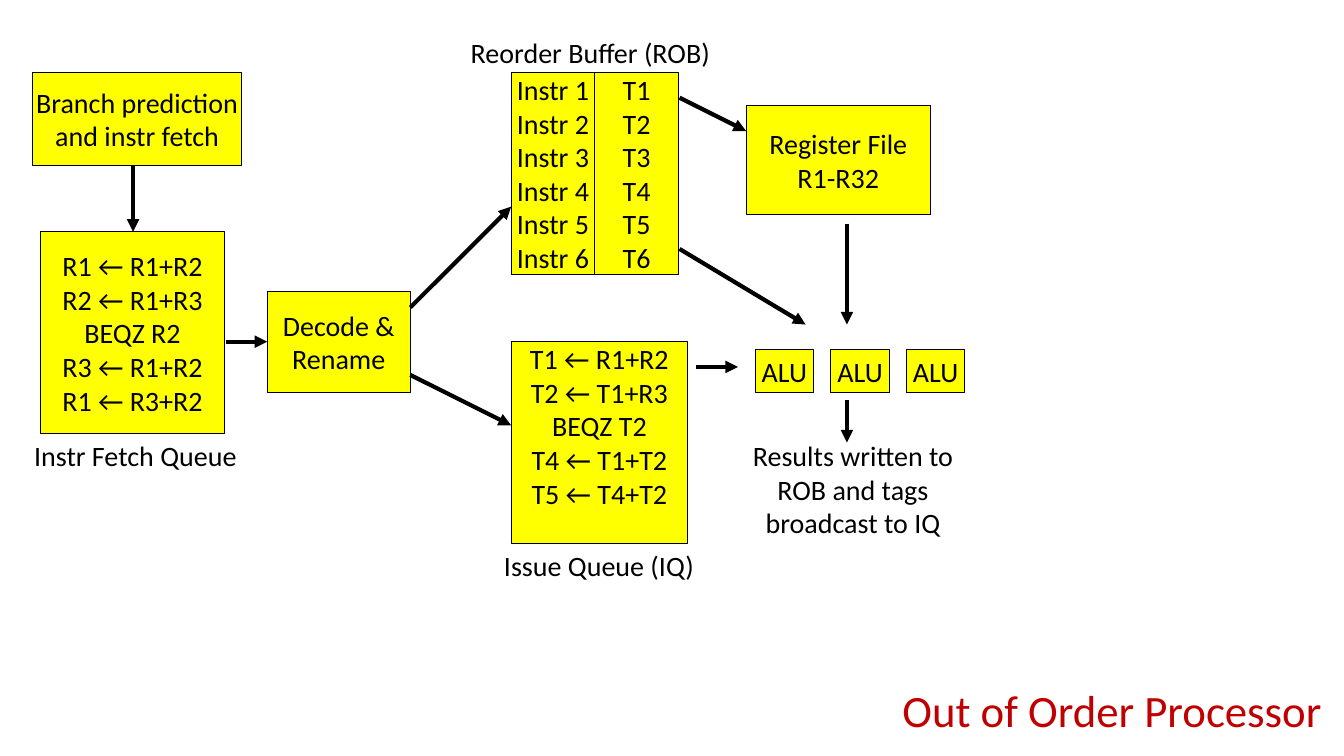
from lxml import etree
from pptx import Presentation
from pptx.dml.color import RGBColor
from pptx.enum.shapes import MSO_CONNECTOR, MSO_SHAPE
from pptx.enum.text import MSO_ANCHOR, MSO_AUTO_SIZE, PP_ALIGN
from pptx.oxml.ns import qn
from pptx.util import Pt

PX = 9144  # 100 px to the inch
BLACK, YELLOW, RED = "000000", "FFFF00", "C00000"

prs = Presentation()
prs.slide_width, prs.slide_height = 1333 * PX, 750 * PX
s = prs.slides.add_slide(prs.slide_layouts[5])


def write(sp, text, size=20, color=BLACK, align=PP_ALIGN.CENTER,
          anchor=MSO_ANCHOR.MIDDLE):
    """Fill a shape with unwrapped text, one paragraph per line."""
    tf = sp.text_frame
    tf.text = text
    tf.word_wrap = False
    tf.vertical_anchor = anchor
    for p in tf.paragraphs:
        p.alignment = align
        for r in p.runs:
            r.font.name = "Calibri"
            r.font.size = Pt(size)
            r.font.color.rgb = RGBColor.from_string(color)


title = s.shapes.title
title.left, title.top, title.width, title.height = (
    v * PX for v in (885, 672, 440, 64))
write(title, "Out of Order Processor", 32, RED, PP_ALIGN.LEFT, MSO_ANCHOR.TOP)
title.text_frame.auto_size = MSO_AUTO_SIZE.SHAPE_TO_FIT_TEXT

rob_instrs = "\n".join(f"Instr {i}" for i in range(1, 7))
rob_tags = "\n".join(f"T{i}" for i in range(1, 7))
fetch_queue = "R1 ← R1+R2\nR2 ← R1+R3\nBEQZ R2\nR3 ← R1+R2\nR1 ← R3+R2"
issue_queue = "T1 ← R1+R2\nT2 ← T1+R3\nBEQZ T2\nT4 ← T1+T2\nT5 ← T4+T2"

boxes = [
    (32, 72, 208, 92, "Branch prediction\nand instr fetch"),
    (40, 230, 183, 200, fetch_queue),
    (265, 289, 142, 100, "Decode &\nRename"),
    (507, 72, 83, 200, rob_instrs),
    (590, 72, 83, 200, rob_tags),
    (507, 339, 175, 200, issue_queue),
    (740, 105, 183, 108, "Register File\nR1-R32"),
]
boxes += [(749 + 75 * i, 347, 58, 42, "ALU") for i in range(3)]
for x, y, w, h, text in boxes:
    sp = s.shapes.add_shape(MSO_SHAPE.RECTANGLE, x * PX, y * PX, w * PX, h * PX)
    sp.shadow.inherit = False
    sp.fill.solid()
    sp.fill.fore_color.rgb = RGBColor.from_string(YELLOW)
    sp.line.color.rgb = RGBColor.from_string(BLACK)
    sp.line.width = Pt(0.75)
    write(sp, text)
    if text == issue_queue:  # entries fill the queue from the top
        sp.text_frame.vertical_anchor = MSO_ANCHOR.TOP
        sp.text_frame.margin_top = 0

labels = [
    (24, 430, 223, 44, "Instr Fetch Queue", PP_ALIGN.LEFT),
    (457, 30, 260, 44, "Reorder Buffer (ROB)", PP_ALIGN.LEFT),
    (490, 539, 211, 44, "Issue Queue (IQ)", PP_ALIGN.LEFT),
    (735, 430, 222, 111, "Results written to\nROB and tags\nbroadcast to IQ",
     PP_ALIGN.CENTER),
]
for x, y, w, h, text, align in labels:
    sp = s.shapes.add_textbox(x * PX, y * PX, w * PX, h * PX)
    write(sp, text, align=align, anchor=MSO_ANCHOR.TOP)
    sp.text_frame.auto_size = MSO_AUTO_SIZE.SHAPE_TO_FIT_TEXT

arrows = [
    (132, 164, 132, 230),  # fetch to fetch queue
    (224, 339, 265, 339),  # fetch queue to decode
    (407, 305, 507, 205),  # decode to ROB
    (407, 372, 507, 422),  # decode to issue queue
    (674, 97, 740, 130),   # ROB to register file
    (674, 247, 799, 322),  # ROB to ALUs
    (690, 364, 732, 364),  # issue queue to ALUs
    (840, 222, 840, 322),  # register file to ALUs
    (840, 397, 840, 439),  # ALUs to results
]
for points in arrows:
    line = s.shapes.add_connector(MSO_CONNECTOR.STRAIGHT, *(v * PX for v in points))
    line.line.color.rgb = RGBColor.from_string(BLACK)
    line.line.width = Pt(3)
    etree.SubElement(line.line._get_or_add_ln(), qn("a:tailEnd"), type="triangle")
    etree.SubElement(line._element.spPr, qn("a:effectLst"))

prs.save("out.pptx")
